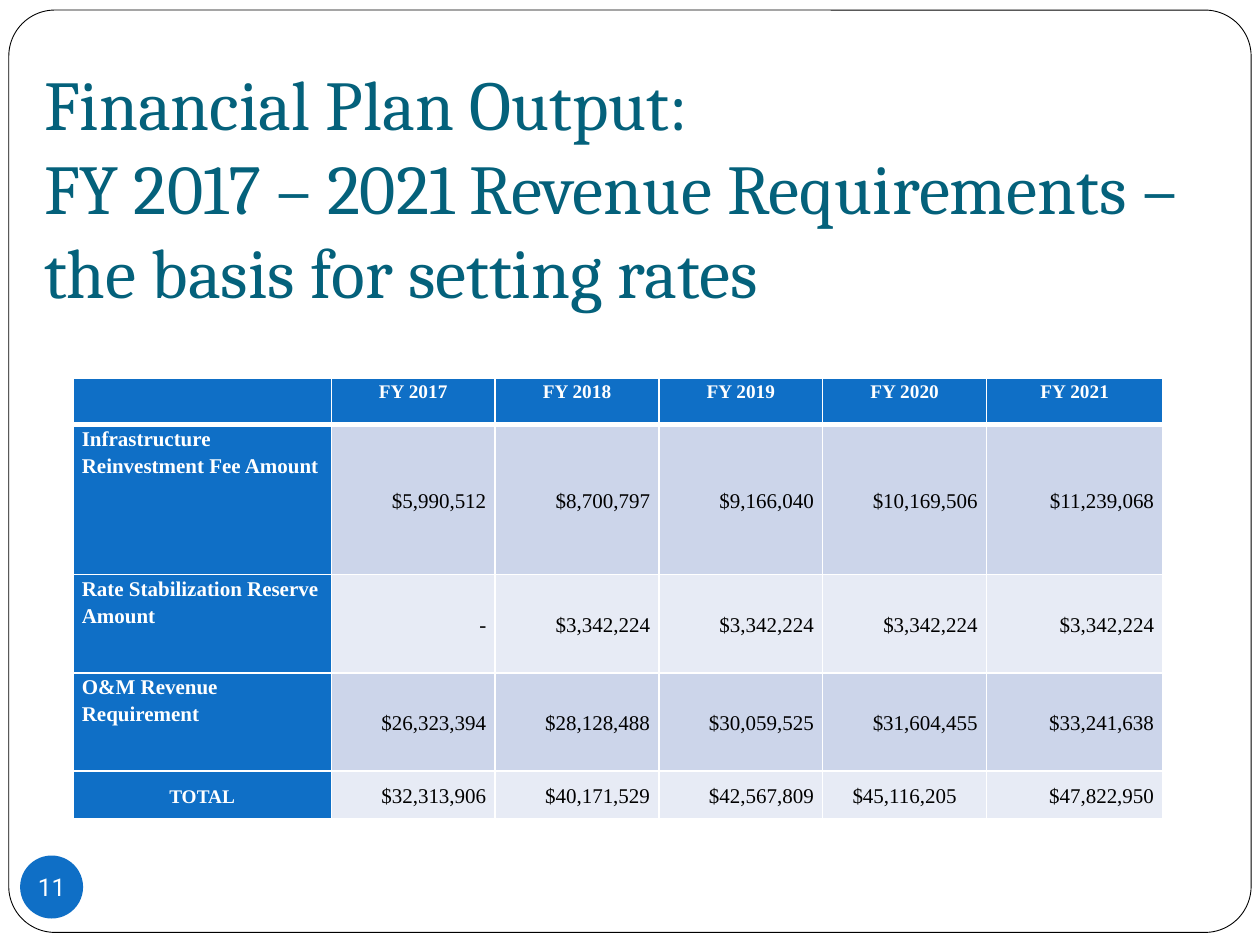
import pptx
import pptx.util
import pptx.dml.color
import pptx.enum.shapes
import pptx.enum.text
import pptx.oxml
import pptx.oxml.ns

Inches, Pt = pptx.util.Inches, pptx.util.Pt
ALIGN = pptx.enum.text.PP_ALIGN
ANCHOR = pptx.enum.text.MSO_ANCHOR
SHAPE = pptx.enum.shapes.MSO_SHAPE

# Content
TITLE = ["Financial Plan Output:",
         "FY 2017 – 2021 Revenue Requirements – the basis for setting rates"]
PAGE = "11"
ROWS = [
    ["", "FY 2017", "FY 2018", "FY 2019", "FY 2020", "FY 2021"],
    ["Infrastructure Reinvestment Fee Amount",
     "$5,990,512", "$8,700,797", "$9,166,040", "$10,169,506", "$11,239,068"],
    ["Rate Stabilization Reserve Amount",
     "-", "$3,342,224", "$3,342,224", "$3,342,224", "$3,342,224"],
    ["O&M Revenue Requirement",
     "$26,323,394", "$28,128,488", "$30,059,525", "$31,604,455", "$33,241,638"],
    ["TOTAL",
     "$32,313,906", "$40,171,529", "$42,567,809", "$45,116,205", "$47,822,950"],
]
WIDTHS = [2.05, 1.3, 1.3, 1.3, 1.3, 1.4]
HEIGHTS = [0.37, 1.19, 0.78, 0.78, 0.38]
LAST = len(ROWS) - 1
CENTRED = (LAST, 4)  # the one total that is centred

THEME = {
    "white": "FFFFFF", "black": "000000", "blue": "0F6FC6", "teal": "04617B",
    "bands": ["E7EBF5", "CCD5EA"],
    "head": "Cambria", "body": "Times New Roman", "num": "Roboto",
    "title": 40, "label": 11, "cell": 12, "page": 14,
}


def rgb(code):
    return pptx.dml.color.RGBColor.from_string(code)


def write(para, text, size, face, color, bold=False):
    run = para.add_run()
    run.text = text
    font = run.font
    font.size, font.name, font.bold = Pt(size), face, bold
    font.color.rgb = rgb(color)


def inset(frame, left, top, right, bottom):
    frame.margin_left, frame.margin_top = Inches(left), Inches(top)
    frame.margin_right, frame.margin_bottom = Inches(right), Inches(bottom)


def add_shape(slide, kind, box, fill):
    shape = slide.shapes.add_shape(kind, *map(Inches, box))
    shape.shadow.inherit = False
    shape.fill.solid()
    shape.fill.fore_color.rgb = rgb(fill)
    return shape


def add_edges(cell, top, bottom):
    props = cell._tc.get_or_add_tcPr()
    sides = {"L": 1, "R": 1, "T": top, "B": bottom}
    for i, (side, width) in enumerate(sides.items()):
        props.insert(i, pptx.oxml.parse_xml(
            f'<a:ln{side} {pptx.oxml.ns.nsdecls("a")} w="{Pt(width)}">'
            f'<a:solidFill><a:srgbClr val="{THEME["white"]}"/></a:solidFill>'
            f'</a:ln{side}>'))


def fill_cell(cell, row, col, text):
    head, label = row == 0, row == 0 or col == 0
    fill = THEME["blue"] if label else THEME["bands"][row % 2]
    cell.fill.solid()
    cell.fill.fore_color.rgb = rgb(fill)
    add_edges(cell, 3 if row == 1 else 1, 3 if head else 1)
    inset(cell, 0.07, 0, 0.07, 0)
    middle = row == LAST or not label
    cell.vertical_anchor = ANCHOR.MIDDLE if middle else ANCHOR.TOP
    para = cell.text_frame.paragraphs[0]
    para.line_spacing = 1.15
    if head or (row, col) in (CENTRED, (LAST, 0)):
        para.alignment = ALIGN.CENTER
    else:
        para.alignment = ALIGN.LEFT if label else ALIGN.RIGHT
    if text:
        small = label and row in (0, LAST)
        write(para, text, THEME["label" if small else "cell"], THEME["body"],
              THEME["white" if label else "black"], label)


def main():
    deck = pptx.Presentation()
    deck.slide_width, deck.slide_height = Inches(10), Inches(7.5)
    slide = deck.slides.add_slide(deck.slide_layouts[5])

    # Title
    title = slide.shapes.title
    title.left, title.top = Inches(0.25), Inches(0.3)
    title.width, title.height = Inches(9.58), Inches(2.28)
    frame = title.text_frame
    frame.word_wrap = True
    frame.auto_size = pptx.enum.text.MSO_AUTO_SIZE.NONE
    frame.vertical_anchor = ANCHOR.BOTTOM
    inset(frame, 0.1, 0.05, 0.1, 0.1)
    para = frame.paragraphs[0]
    para.alignment = ALIGN.LEFT
    for i, line in enumerate(TITLE):
        if i:
            para.add_line_break()
        write(para, line, THEME["title"], THEME["head"], THEME["teal"])

    # Rounded border behind the title
    border = add_shape(slide, SHAPE.ROUNDED_RECTANGLE,
                       (0.07, 0.08, 9.86, 7.32), THEME["white"])
    border.adjustments[0] = 0.05
    border.line.color.rgb = rgb(THEME["black"])
    border.line.width = Pt(0.5)
    title._element.addprevious(border._element)

    # Revenue table
    table = slide.shapes.add_table(
        len(ROWS), len(WIDTHS), Inches(0.58), Inches(3),
        Inches(sum(WIDTHS)), Inches(sum(HEIGHTS))).table
    for col, width in zip(table.columns, WIDTHS):
        col.width = Inches(width)
    for row, height in zip(table.rows, HEIGHTS):
        row.height = Inches(height)
    for r, row in enumerate(ROWS):
        for c, text in enumerate(row):
            fill_cell(table.cell(r, c), r, c, text)

    # Page number
    badge = add_shape(slide, SHAPE.OVAL, (0.16, 6.79, 0.5, 0.5), THEME["blue"])
    badge.line.fill.background()
    frame = badge.text_frame
    frame.word_wrap = False
    frame.vertical_anchor = ANCHOR.MIDDLE
    inset(frame, 0, 0, 0, 0)
    frame.paragraphs[0].alignment = ALIGN.CENTER
    write(frame.paragraphs[0], PAGE, THEME["page"], THEME["num"], THEME["white"])

    deck.save("out.pptx")


if __name__ == "__main__":
    main()
